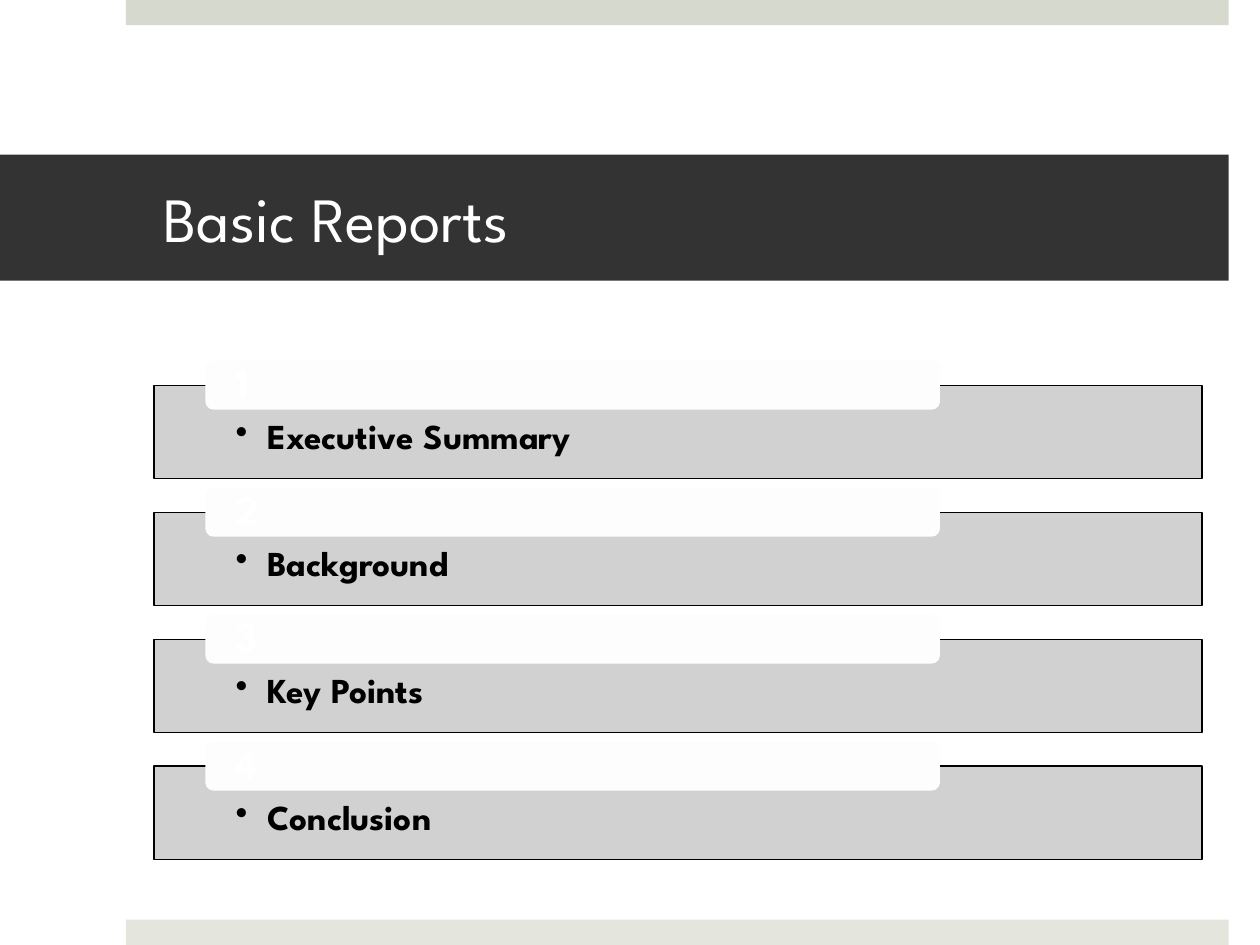
from lxml import etree
from pptx import Presentation
from pptx.dml.color import RGBColor
from pptx.enum import shapes, text
from pptx.oxml.ns import qn
from pptx import util as u

COLORS = {
    "top": "D6D9CD",
    "bottom": "E4E6DE",
    "title": "333333",
    "bar": "CCCCCC",
    "tab": "FDFDFD",
    "white": "FFFFFF",
    "black": "000000",
}
TITLE = {"size": u.Pt(36), "bold": False}
ITEM = {"size": u.Pt(20), "bold": True}
NUMBER = {"size": u.Pt(24), "bold": True}
ITEMS = ["Executive Summary", "Background", "Key Points", "Conclusion"]
FIRST_TOP, PITCH = 7.77, 2.56


def rgb(name):
    return RGBColor.from_string(COLORS[name])


class Deck:
    font = "League Spartan"

    def __init__(self, width, height):
        self.prs = Presentation()
        self.prs.slide_width, self.prs.slide_height = u.Cm(width), u.Cm(height)
        self.s = self.prs.slides.add_slide(self.prs.slide_layouts[6])

    def box(self, at, fill, kind=shapes.MSO_SHAPE.RECTANGLE):
        sp = self.s.shapes.add_shape(kind, *map(u.Cm, at))
        sp.shadow.inherit = False
        sp.fill.solid()
        sp.fill.fore_color.rgb = rgb(fill)
        sp.line.fill.background()
        return sp

    def label(self, sp, words, color, fmt, insets, anchor=text.MSO_ANCHOR.MIDDLE, spacing=1.0):
        tf = sp.text_frame
        sides = ("margin_left", "margin_top", "margin_right", "margin_bottom")
        frame = dict(zip(sides, map(u.Cm, insets)), word_wrap=True, vertical_anchor=anchor)
        for name, value in frame.items():
            setattr(tf, name, value)
        p = tf.paragraphs[0]
        p.alignment = text.PP_ALIGN.LEFT
        p.line_spacing = spacing
        r = p.add_run()
        r.text = words
        for name, value in {"name": self.font, **fmt}.items():
            setattr(r.font, name, value)
        r.font.color.rgb = rgb(color)
        return p

    def title(self, words):
        sp = self.box((0, 3.12, 24.77, 2.54), "title")
        self.label(sp, words, "white", TITLE, (3.3, 0.13, 0.76, 0.13))

    def bar(self, top, words):
        sp = self.box((3.1, top, 21.13, 1.88), "bar")
        sp.line.color.rgb = rgb("black")
        sp.line.width = u.Pt(1)
        color = sp._element.spPr.find(qn("a:solidFill"))[0]
        etree.SubElement(color, qn("a:alpha"), val="90000")
        p = self.label(sp, words, "black", ITEM, (1.65, 0.69, 1.65, 0.41),
                       text.MSO_ANCHOR.TOP, 0.9)
        pPr = p._p.get_or_add_pPr()
        pPr.set("marL", str(u.Cm(0.64)))
        pPr.set("indent", str(-u.Cm(0.64)))
        etree.SubElement(pPr, qn("a:buChar"), char="•")

    def tab(self, top, number):
        sp = self.box((4.14, top, 14.81, 0.99), "tab", shapes.MSO_SHAPE.ROUNDED_RECTANGLE)
        self.label(sp, str(number), "white", NUMBER, (0.56, 0, 0.56, 0), spacing=0.9)


def main():
    deck = Deck(25.4, 19.05)
    deck.box((2.54, 0, 22.23, 0.51), "top")
    deck.box((2.54, 18.54, 22.23, 0.51), "bottom")
    deck.title("Basic Reports")
    for i, words in enumerate(ITEMS):
        top = FIRST_TOP + i * PITCH
        deck.bar(top, words)
        deck.tab(top - 0.5, i + 1)
    deck.prs.save("out.pptx")


if __name__ == "__main__":
    main()
